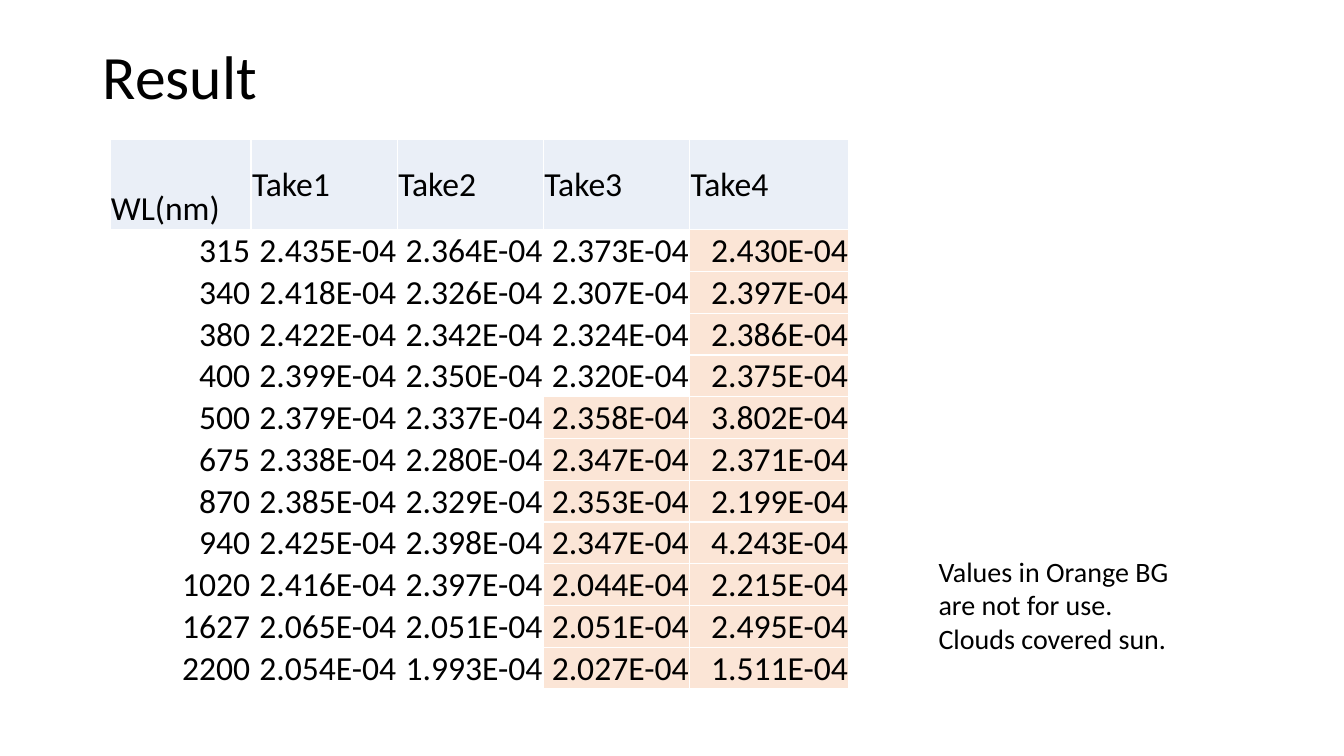
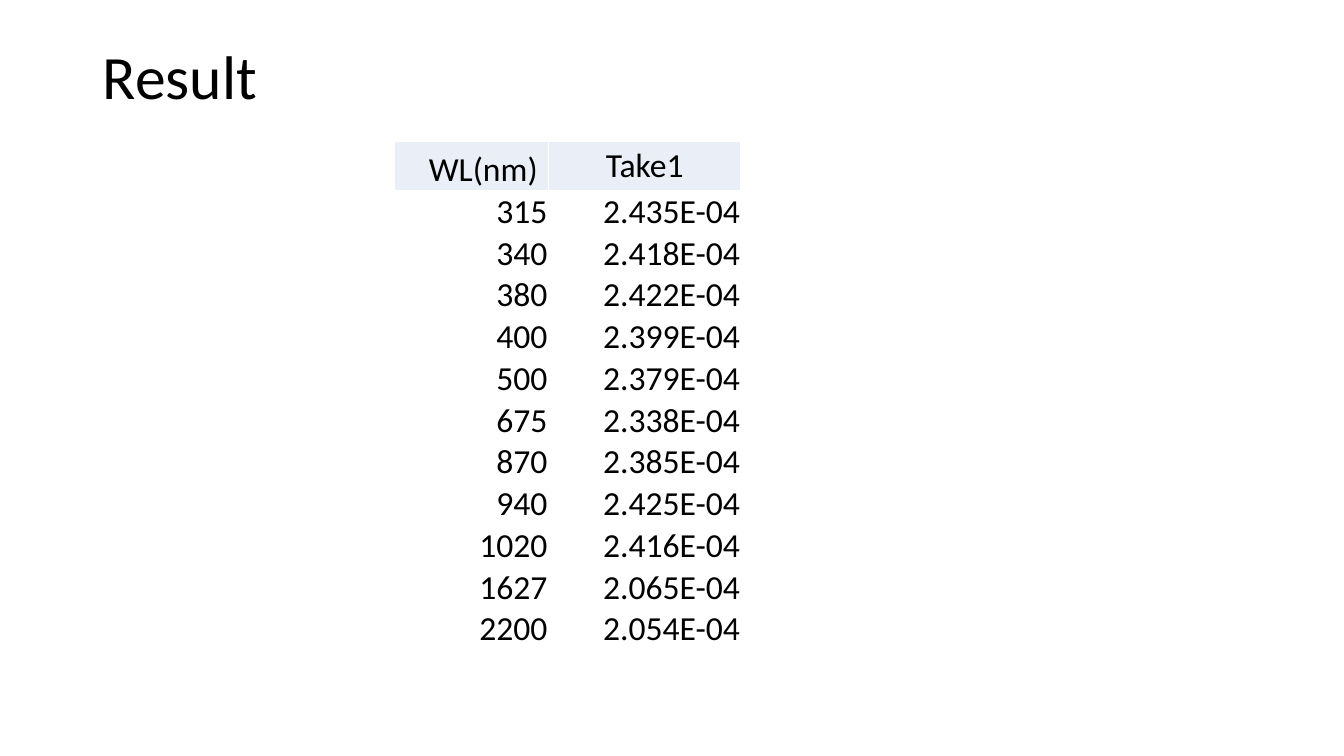
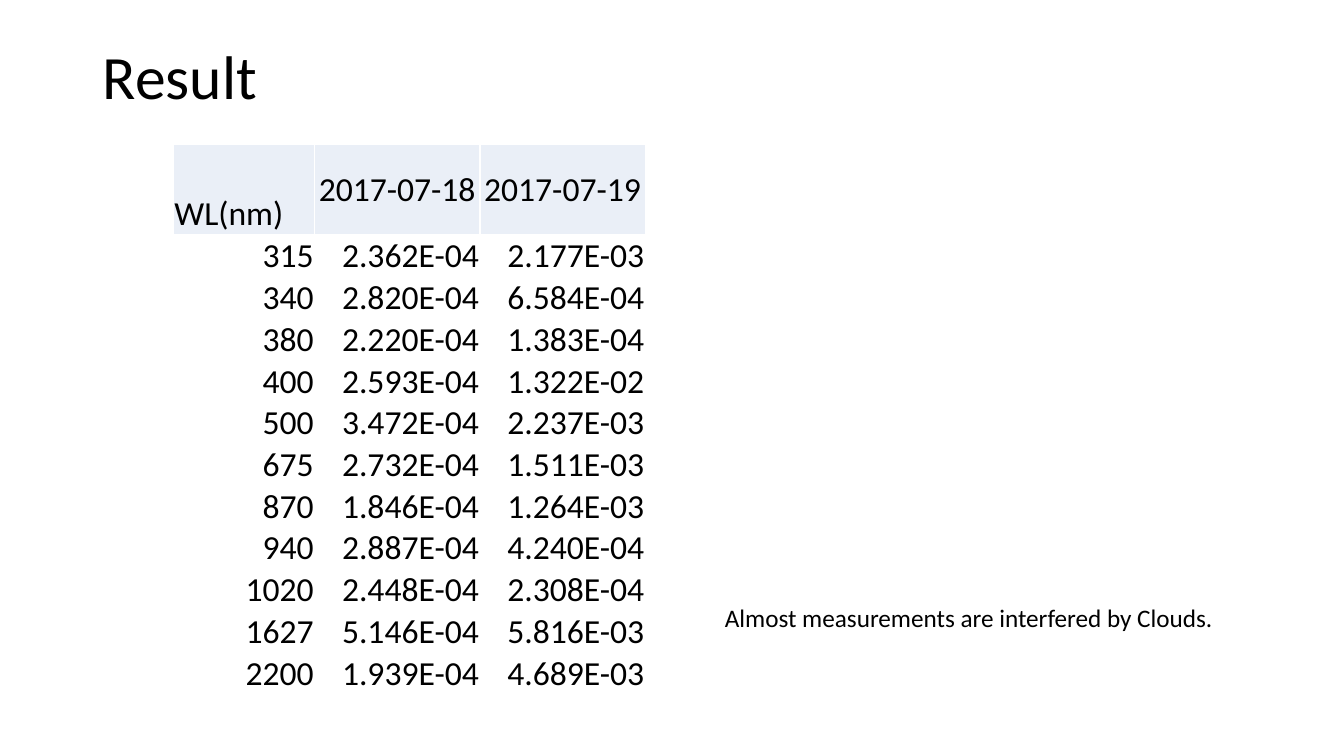
from dataclasses import dataclass, field
from typing import Optional

import pptx
import pptx.dml.color
import pptx.enum.text
import pptx.oxml
import pptx.oxml.ns
import pptx.util

Inches = pptx.util.Inches
Align = pptx.enum.text.PP_ALIGN
Anchor = pptx.enum.text.MSO_ANCHOR

# Shared look
FONT = "Calibri"
TEXT, BORDER, HEADER_FILL, UNUSABLE_FILL = "000000", "FFFFFF", "EAEFF7", "FBE5D6"
TITLE, TITLE_BOX = "Result", (0.92, 0.4, 11.5, 0.77)
WAVELENGTH_HEADING = "　WL(nm)"
BODY_HEIGHT = 4.56
CELL_FORMAT = {
    "margin_left": Inches(0.01),
    "margin_right": Inches(0.01),
    "margin_top": Inches(0.01),
    "margin_bottom": 0,
    "vertical_anchor": Anchor.MIDDLE,
}

# Measurements
WAVELENGTHS = "315 340 380 400 500 675 870 940 1020 1627 2200".split()
TAKE1 = ("2.435E-04 2.418E-04 2.422E-04 2.399E-04 2.379E-04 2.338E-04 "
         "2.385E-04 2.425E-04 2.416E-04 2.065E-04 2.054E-04").split()
TAKE2 = ("2.364E-04 2.326E-04 2.342E-04 2.350E-04 2.337E-04 2.280E-04 "
         "2.329E-04 2.398E-04 2.397E-04 2.051E-04 1.993E-04").split()
TAKE3 = ("2.373E-04 2.307E-04 2.324E-04 2.320E-04 2.358E-04 2.347E-04 "
         "2.353E-04 2.347E-04 2.044E-04 2.051E-04 2.027E-04").split()
TAKE4 = ("2.430E-04 2.397E-04 2.386E-04 2.375E-04 3.802E-04 2.371E-04 "
         "2.199E-04 4.243E-04 2.215E-04 2.495E-04 1.511E-04").split()
JULY_18 = ("2.362E-04 2.820E-04 2.220E-04 2.593E-04 3.472E-04 2.732E-04 "
           "1.846E-04 2.887E-04 2.448E-04 5.146E-04 1.939E-04").split()
JULY_19 = ("2.177E-03 6.584E-04 1.383E-04 1.322E-02 2.237E-03 1.511E-03 "
           "1.264E-03 4.240E-04 2.308E-04 5.816E-03 4.689E-03").split()


@dataclass
class Series:
    heading: str
    values: list[str]
    width: float
    unusable_from: Optional[str] = None  # first wavelength spoiled by clouds


@dataclass
class Note:
    text: str
    box: tuple[float, float, float, float]
    size: int
    wrap: bool = True


@dataclass
class ResultSlide:
    left: float
    top: float
    header_height: float
    wavelength_width: float
    series: list[Series]
    heading_align: Align = Align.CENTER
    notes: list[Note] = field(default_factory=list)


RESULTS = [
    ResultSlide(
        1.09, 1.38, 0.9, 1.4,
        [
            Series("Take1", TAKE1, 1.45),
            Series("Take2", TAKE2, 1.45),
            Series("Take3", TAKE3, 1.45, unusable_from="500"),
            Series("Take4", TAKE4, 1.58, unusable_from="315"),
        ],
        Align.LEFT,
        [Note("Values in Orange BG are not for use.\nClouds covered sun.",
              (9.21, 5.45, 2.81, 1.11), 20)],
    ),
    ResultSlide(3.91, 1.4, 0.49, 1.53, [Series("Take1", TAKE1, 1.91)]),
    ResultSlide(
        1.72, 1.43, 0.9, 1.4,
        [Series("2017-07-18", JULY_18, 1.64), Series("2017-07-19", JULY_19, 1.64)],
        notes=[Note("Almost measurements are interfered by Clouds.",
                    (7.09, 5.93, 5.15, 0.4), 18, wrap=False)],
    ),
]


def color(value: str) -> pptx.dml.color.RGBColor:
    return pptx.dml.color.RGBColor.from_string(value)


def write(frame, text: str, size: int, align: Align = Align.LEFT):
    paragraph = frame.paragraphs[0]
    paragraph.text = text
    paragraph.alignment = align
    for run in paragraph.runs:
        run.font.name = FONT
        run.font.size = pptx.util.Pt(size)
        run.font.color.rgb = color(TEXT)
    return paragraph


def add_text(slide, note: Note):
    frame = slide.shapes.add_textbox(*map(Inches, note.box)).text_frame
    frame.word_wrap = note.wrap
    return frame, write(frame, note.text, note.size)


def add_title(slide) -> None:
    frame, paragraph = add_text(slide, Note(TITLE, TITLE_BOX, 44))
    frame.vertical_anchor = Anchor.MIDDLE
    paragraph.line_spacing = 0.9


def add_borders(cell) -> None:
    properties = cell._tc.get_or_add_tcPr()
    for side in ("lnL", "lnR", "lnT", "lnB"):
        properties.append(pptx.oxml.parse_xml(
            f'<a:{side} {pptx.oxml.ns.nsdecls("a")} w="12700"><a:solidFill>'
            f'<a:srgbClr val="{BORDER}"/></a:solidFill></a:{side}>'))


def fill_cell(cell, text: str, align: Align, fill: Optional[str]) -> None:
    for name, value in CELL_FORMAT.items():
        setattr(cell, name, value)
    write(cell.text_frame, text, 24, align)
    add_borders(cell)
    if fill:
        cell.fill.solid()
        cell.fill.fore_color.rgb = color(fill)
    else:
        cell.fill.background()


def add_results(slide, result: ResultSlide) -> None:
    columns = [Series(WAVELENGTH_HEADING, WAVELENGTHS, result.wavelength_width),
               *result.series]
    heights = [result.header_height] + [BODY_HEIGHT / len(WAVELENGTHS)] * len(WAVELENGTHS)
    table = slide.shapes.add_table(
        len(heights), len(columns), Inches(result.left), Inches(result.top),
        Inches(sum(column.width for column in columns)), Inches(sum(heights))).table
    table.first_row = table.horz_banding = False
    for row, height in zip(table.rows, heights):
        row.height = Inches(height)
    for index, column in enumerate(columns):
        table.columns[index].width = Inches(column.width)
        align = result.heading_align if index else Align.LEFT
        fill_cell(table.cell(0, index), column.heading, align, HEADER_FILL)
        fill = None
        for row, (wavelength, value) in enumerate(zip(WAVELENGTHS, column.values), 1):
            if wavelength == column.unusable_from:
                fill = UNUSABLE_FILL
            fill_cell(table.cell(row, index), value, Align.RIGHT, fill)


def main() -> None:
    deck = pptx.Presentation()
    deck.slide_width, deck.slide_height = Inches(13.33), Inches(7.5)
    for result in RESULTS:
        slide = deck.slides.add_slide(deck.slide_layouts[6])
        add_title(slide)
        add_results(slide, result)
        for note in result.notes:
            add_text(slide, note)
    deck.save("out.pptx")


if __name__ == "__main__":
    main()
